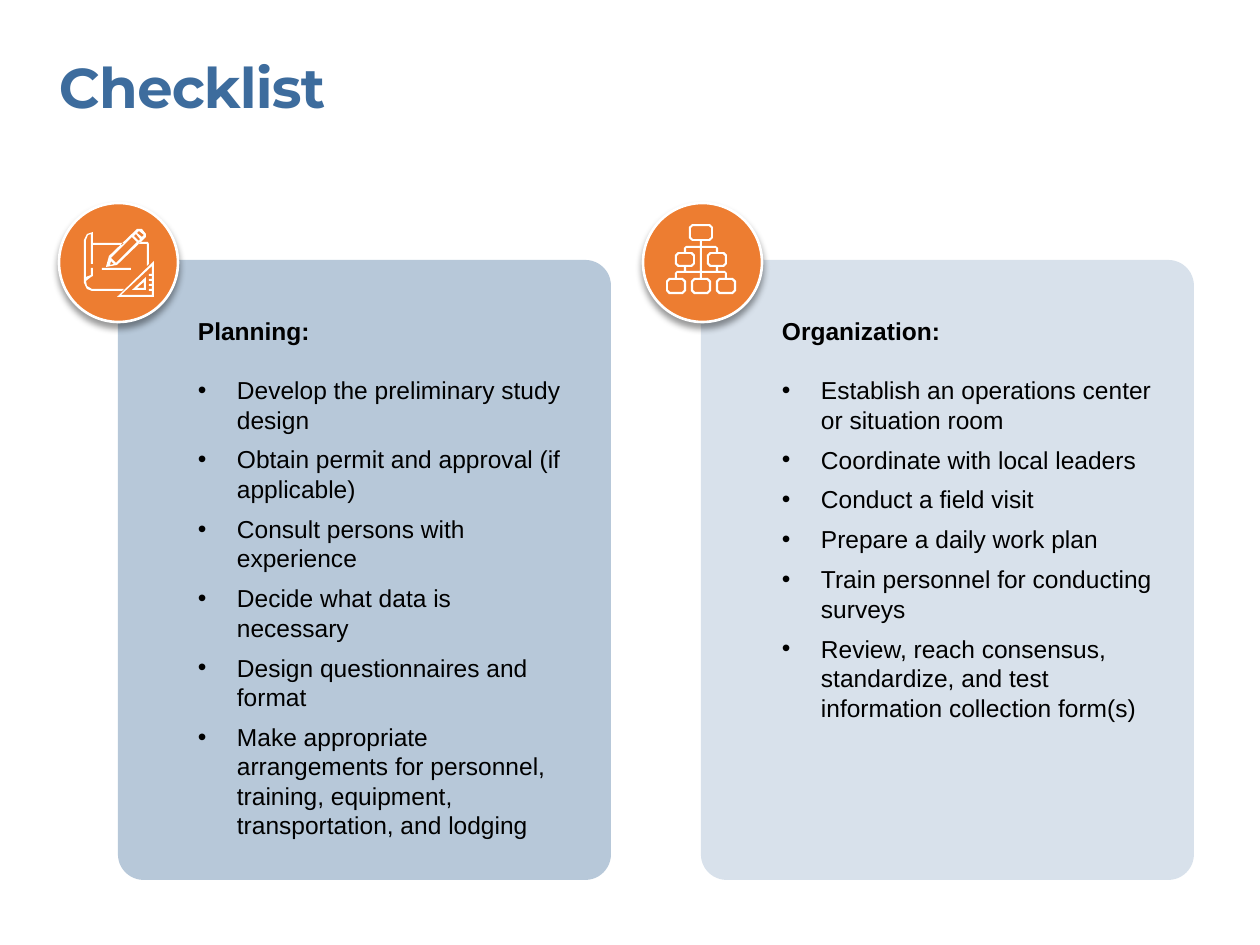
from dataclasses import dataclass
from lxml.etree import SubElement
from pptx import Presentation
from pptx.dml.color import RGBColor
from pptx.enum.shapes import MSO_SHAPE
from pptx.oxml.ns import qn
from pptx.util import Pt

SCALE = 914400 / 126


@dataclass(frozen=True)
class Theme:
    blue: str = "3D6C9D"
    mist: str = "B7C8D9"
    orange: str = "ED7D31"
    white: str = "FFFFFF"
    black: str = "000000"
    head: str = "Montserrat"
    body: str = "Arial"
    title: int = 32
    text: int = 14
    ring: float = 1.5


THEME = Theme()

PLAN = ("Planning:", [
    "Develop the preliminary study design",
    "Obtain permit and approval (if applicable)",
    "Consult persons with experience",
    "Decide what data is necessary",
    "Design questionnaires and format",
    "Make appropriate arrangements for personnel, training, equipment, "
    "transportation, and lodging",
])
TEAM = ("Organization:", [
    "Establish an operations center or situation room",
    "Coordinate with local leaders",
    "Conduct a field visit",
    "Prepare a daily work plan",
    "Train personnel for conducting surveys",
    "Review, reach consensus, standardize, and test information collection form(s)",
])

SHEET = [
    (93, 232), (87, 234), (84, 240), (84, 283), (87, 289), (92, 291),
    (122, 291), (124, 289), (92, 289), (87, 286), (86, 281), (91, 277),
    (93, 276), (93, 268), (91, 268), (91, 275), (86, 277), (86, 240),
    (88, 235), (91, 234), (91, 264), (93, 264), (93, 245), (122, 245),
    (124, 243), (93, 243)]
EDGE = [(140, 242), (148, 242), (149, 244), (149, 264), (147, 266),
        (147, 244), (138, 244)]
PENCIL = [
    [(106, 267), (109, 256), (137, 229), (142, 229), (146, 234),
     (146, 237), (117, 265)],
    [(137, 242), (132, 237), (111, 258), (116, 263)],
    [(139, 241), (140, 239), (136, 234), (134, 236)],
    [(137, 233), (142, 237), (144, 235), (139, 231)],
    [(111, 261), (110, 265), (114, 264)]]
SQUARE = [(154, 261), (154, 297), (117, 297)]
HOLE = [[(146, 277), (146, 290), (132, 290)],
        [(144, 282), (144, 288), (137, 288)]]


def px(*nums):
    return [round(n * SCALE) for n in nums]


def rgb(code):
    return RGBColor.from_string(code)


def paint(shape, color):
    shape.fill.solid()
    shape.fill.fore_color.rgb = rgb(color)


def add_panel(slide, left, color, alpha=None):
    shape = slide.shapes.add_shape(
        MSO_SHAPE.ROUNDED_RECTANGLE, *px(left, 260, 493, 620))
    shape.adjustments[0] = 0.052
    shape.shadow.inherit = False
    paint(shape, color)
    shape.line.fill.background()
    if alpha:
        tint = shape._element.spPr.find(qn("a:solidFill"))[0]
        SubElement(tint, qn("a:alpha"), val=str(alpha * 1000))


def add_badge(slide, left):
    shape = slide.shapes.add_shape(MSO_SHAPE.OVAL, *px(left, 203, 119, 119))
    paint(shape, THEME.orange)
    shape.line.color.rgb = rgb(THEME.white)
    shape.line.width = Pt(THEME.ring)
    shade = SubElement(
        SubElement(shape._element.spPr, qn("a:effectLst")),
        qn("a:outerShdw"), blurRad=str(Pt(4)), dist=str(Pt(3)),
        dir="5400000", algn="ctr", rotWithShape="0")
    tint = SubElement(shade, qn("a:srgbClr"), val=THEME.black)
    SubElement(tint, qn("a:alpha"), val="40000")


def add_icon(slide, loops):
    pen = slide.shapes.build_freeform(*loops[0][0], scale=SCALE)
    for rank, loop in enumerate(loops):
        if rank:
            pen.move_to(*loop[0])
        pen.add_line_segments(loop[1:], close=True)
    shape = pen.convert_to_shape()
    shape.shadow.inherit = False
    paint(shape, THEME.white)
    shape.line.fill.background()


def block(left, top, right, low):
    return [(left, top), (right, top), (right, low), (left, low)]


def bevel(left, top, right, low, cut):
    return [(left + cut, top), (right - cut, top), (right, top + cut),
            (right, low - cut), (right - cut, low), (left + cut, low),
            (left, low - cut), (left, top + cut)]


def node(mid, half, top, low):
    left, right = mid - half, mid + half
    return [bevel(left, top, right, low, 3),
            bevel(left + 2, top + 2, right - 2, low - 2, 2)]


def stem(mid, top, low):
    return block(mid - 1, top, mid + 1, low)


def fork(mid, half, top, low):
    left, right = mid - half, mid + half
    return [
        (left - 1, low), (left - 1, top + 2), (left + 1, top),
        (right - 1, top), (right + 1, top + 2), (right + 1, low),
        (right - 1, low), (right - 1, top + 2), (left + 1, top + 2),
        (left + 1, low)]


def draw_chart(slide):
    mid = 701
    loops = node(mid, 12, 224, 241)
    for side in (mid - 16, mid + 16):
        loops += node(side, 10, 252, 267)
        loops.append(stem(side, 267, 271))
    for side in (mid - 25, mid, mid + 25):
        loops += node(side, 10, 278, 294)
    loops += [fork(mid, 16, 246, 252), fork(mid, 25, 271, 278),
              stem(mid, 241, 246), stem(mid, 248, 271), stem(mid, 273, 278)]
    add_icon(slide, loops)


def draw_plan(slide):
    inner = [(121, 295), (152, 295)]
    for top in range(289, 273, -5):
        inner += [(152, top + 2), (149, top + 2), (149, top), (152, top)]
    inner.append((152, 266))
    add_icon(slide, [SHEET, EDGE, block(102, 268, 131, 270), *PENCIL,
                     SQUARE, inner])
    add_icon(slide, HOLE)


def add_box(slide, *place):
    frame = slide.shapes.add_textbox(*px(*place)).text_frame
    frame.word_wrap = True
    frame.margin_left = frame.margin_right = 0
    frame.margin_top = frame.margin_bottom = 0
    return frame


def style(para, face, size, color, bold):
    font = para.runs[0].font
    font.name, font.size, font.bold = face, Pt(size), bold
    font.color.rgb = rgb(color)


def add_title(slide, text):
    para = add_box(slide, 59, 53, 1077, 68).paragraphs[0]
    para.text = text
    style(para, THEME.head, THEME.title, THEME.blue, True)
    para.runs[0].font._element.set("spc", "-50")


def add_mark(para):
    props = para._p.get_or_add_pPr()
    dent = px(39)[0]
    props.set("marL", str(dent))
    props.set("indent", str(-dent))
    tint = SubElement(props, qn("a:buClr"))
    SubElement(tint, qn("a:srgbClr"), val=THEME.black)
    SubElement(props, qn("a:buFont"), typeface=THEME.body)
    SubElement(props, qn("a:buChar"), char="•")


def add_list(slide, place, group):
    head, items = group
    frame = add_box(slide, *place)
    for rank, text in enumerate([head, *items]):
        para = frame.add_paragraph() if rank else frame.paragraphs[0]
        para.text = text
        para.space_after = Pt(6 if rank else 17)
        style(para, THEME.body, THEME.text, THEME.black, not rank)
        if rank:
            add_mark(para)


def main():
    deck = Presentation()
    deck.slide_width, deck.slide_height = px(1260, 945)
    slide = deck.slides.add_slide(deck.slide_layouts[6])
    add_title(slide, "Checklist")
    add_panel(slide, 118, THEME.mist)
    add_panel(slide, 701, THEME.blue, 20)
    for left in (59, 643):
        add_badge(slide, left)
    add_list(slide, (198, 316, 365, 528), PLAN)
    add_list(slide, (782, 316, 379, 410), TEAM)
    draw_chart(slide)
    draw_plan(slide)
    deck.save("out.pptx")


if __name__ == "__main__":
    main()
